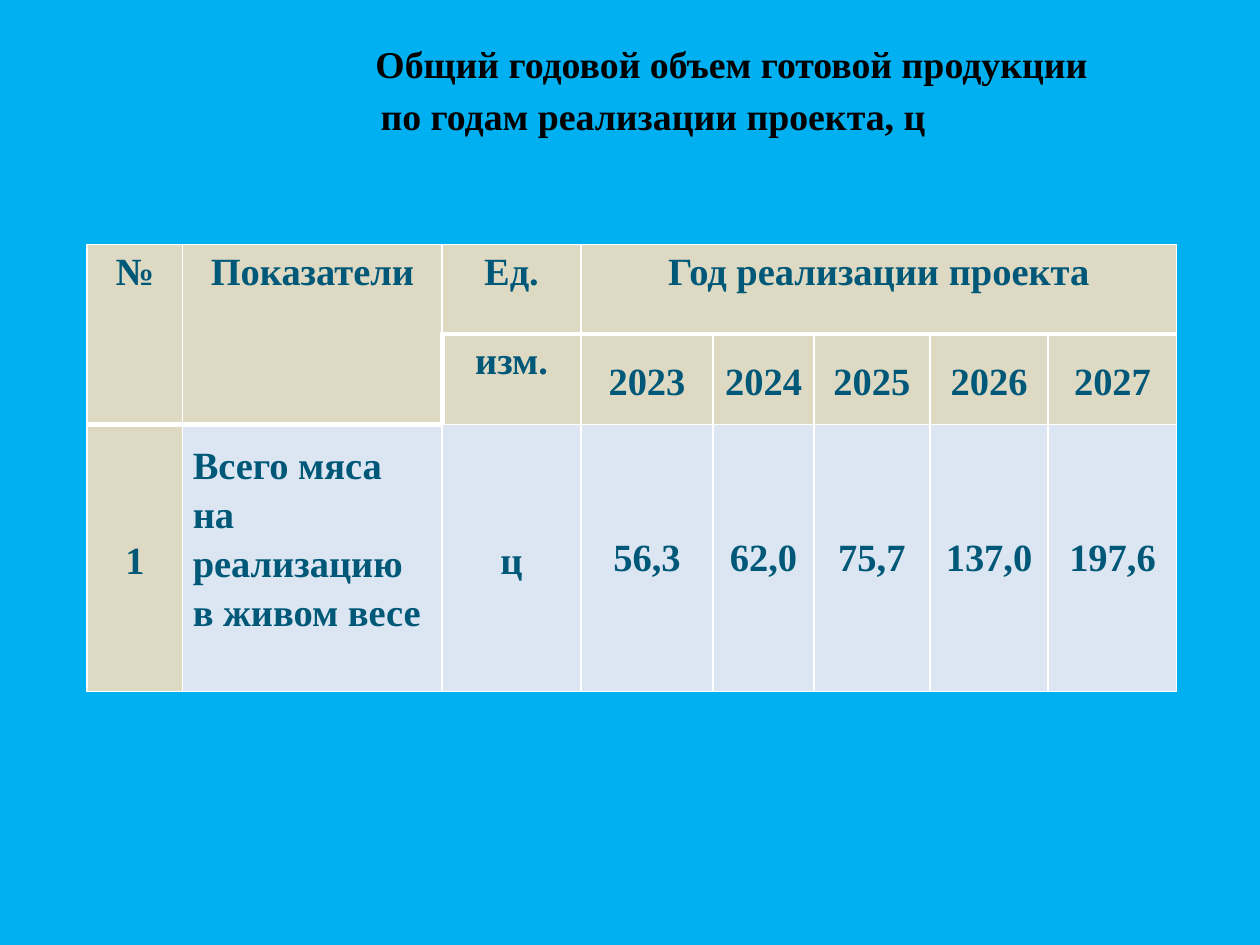
from dataclasses import dataclass

from lxml.etree import SubElement
from pptx import Presentation
from pptx.dml.color import RGBColor
from pptx.enum.text import MSO_ANCHOR, PP_ALIGN
from pptx.oxml.ns import qn
from pptx.util import Inches, Pt

SKY = RGBColor(0x00, 0xB0, 0xF0)
BLACK = RGBColor(0x00, 0x00, 0x00)
WHITE = RGBColor(0xFF, 0xFF, 0xFF)
TEAL = RGBColor(0x00, 0x58, 0x78)
SAND = RGBColor(0xDD, 0xD9, 0xC3)
PALE_BLUE = RGBColor(0xDC, 0xE6, 0xF2)

FONT = "Times New Roman"
THIN, THICK = 1, 3
COL_WIDTHS = (0.76, 2.06, 1.1, 1.05, 0.8, 0.92, 0.94, 1.02)
ROW_HEIGHTS = (0.71, 0.72, 2.12)
YEARS = ("2023", "2024", "2025", "2026", "2027")
VOLUMES = ("56,3", "62,0", "75,7", "137,0", "197,6")


@dataclass(frozen=True)
class TableCell:
    row: int
    col: int
    text: str
    fill: RGBColor = SAND
    anchor: MSO_ANCHOR = MSO_ANCHOR.MIDDLE
    align: PP_ALIGN = PP_ALIGN.CENTER
    spacing: float = 1.15
    margin: float = 0.08
    bottom: float = 0
    rows: int = 1
    cols: int = 1


CELLS = [
    TableCell(0, 0, "№", anchor=MSO_ANCHOR.TOP, rows=2),
    TableCell(0, 1, "Показатели", anchor=MSO_ANCHOR.TOP, rows=2),
    TableCell(0, 2, "Ед.", anchor=MSO_ANCHOR.TOP),
    TableCell(0, 3, "Год реализации проекта", anchor=MSO_ANCHOR.TOP, cols=5),
    TableCell(1, 2, "изм.", anchor=MSO_ANCHOR.TOP),
    *(TableCell(1, c, year) for c, year in enumerate(YEARS, 3)),
    TableCell(2, 0, "1"),
    TableCell(2, 1, "Всего мяса на реализацию\vв живом весе", PALE_BLUE,
              align=PP_ALIGN.LEFT, bottom=0.33),
    TableCell(2, 2, "ц", PALE_BLUE),
    *(TableCell(2, c, volume, PALE_BLUE, spacing=1.0, margin=0.07)
      for c, volume in enumerate(VOLUMES, 3)),
]


def format_font(font, size: float, color: RGBColor) -> None:
    for name, value in {"name": FONT, "size": Pt(size), "bold": True}.items():
        setattr(font, name, value)
    font.color.rgb = color


def border_widths(row: int, col: int) -> dict[str, int]:
    """The thick rule steps down to the left of the unit column."""
    left_part = col < 2
    thick = {
        "L": row == 1 and col == 2,
        "R": row < 2 and col == 1,
        "T": row == (2 if left_part else 1),
        "B": row < 2 if left_part else row == 0,
    }
    if (row, col) == (0, 1):
        thick["R"] = False
    return {side: THICK if on else THIN for side, on in thick.items()}


def set_borders(cell, widths: dict[str, int]) -> None:
    tc_pr = cell._tc.get_or_add_tcPr()
    for side, width in widths.items():
        ln = SubElement(tc_pr, qn(f"a:ln{side}"), w=str(Pt(width)))
        fill = SubElement(ln, qn("a:solidFill"))
        SubElement(fill, qn("a:srgbClr"), val=str(WHITE))


def fill_cell(table, item: TableCell) -> None:
    cell = table.cell(item.row, item.col)
    if item.rows > 1 or item.cols > 1:
        cell.merge(table.cell(item.row + item.rows - 1, item.col + item.cols - 1))
    cell.fill.solid()
    cell.fill.fore_color.rgb = item.fill
    layout = {
        "vertical_anchor": item.anchor,
        "margin_left": Inches(item.margin),
        "margin_right": Inches(item.margin),
        "margin_top": 0,
        "margin_bottom": Inches(item.bottom),
    }
    for name, value in layout.items():
        setattr(cell, name, value)
    p = cell.text_frame.paragraphs[0]
    p.text = item.text
    p.alignment = item.align
    p.line_spacing = item.spacing
    for r in p.runs:
        format_font(r.font, 22, TEAL)


def add_title(s) -> None:
    title = s.shapes.title
    title.left, title.top = Inches(0.83), Inches(0.44)
    title.width, title.height = Inches(8.62), Inches(0.79)
    tf = title.text_frame
    tf.word_wrap = True
    tf.vertical_anchor = MSO_ANCHOR.MIDDLE
    tf.margin_top, tf.margin_bottom = 0, Inches(0.3)
    tf.text = "Общий годовой объем готовой продукции\nпо годам реализации проекта, ц"
    for p, indent in zip(tf.paragraphs, (2.05, 2.09)):
        p.alignment = PP_ALIGN.LEFT
        p.line_spacing = 1.15
        p.space_before = Pt(0)
        p._p.get_or_add_pPr().set("marL", str(Inches(indent)))
        format_font(p.runs[0].font, 21.6, BLACK)


def add_volume_table(s) -> None:
    frame = s.shapes.add_table(
        len(ROW_HEIGHTS), len(COL_WIDTHS),
        Inches(0.69), Inches(1.94), Inches(8.64), Inches(3.54))
    table = frame.table
    table.first_row = table.horz_banding = False
    for column, width in zip(table.columns, COL_WIDTHS):
        column.width = Inches(width)
    for r, height in enumerate(ROW_HEIGHTS):
        table.rows[r].height = Inches(height)
        for c in range(len(COL_WIDTHS)):
            set_borders(table.cell(r, c), border_widths(r, c))
    for item in CELLS:
        fill_cell(table, item)


def main() -> None:
    prs = Presentation()
    prs.slide_width, prs.slide_height = Inches(10), Inches(7.5)
    s = prs.slides.add_slide(prs.slide_layouts[5])
    s.background.fill.solid()
    s.background.fill.fore_color.rgb = SKY
    add_title(s)
    add_volume_table(s)
    prs.save("out.pptx")


if __name__ == "__main__":
    main()
